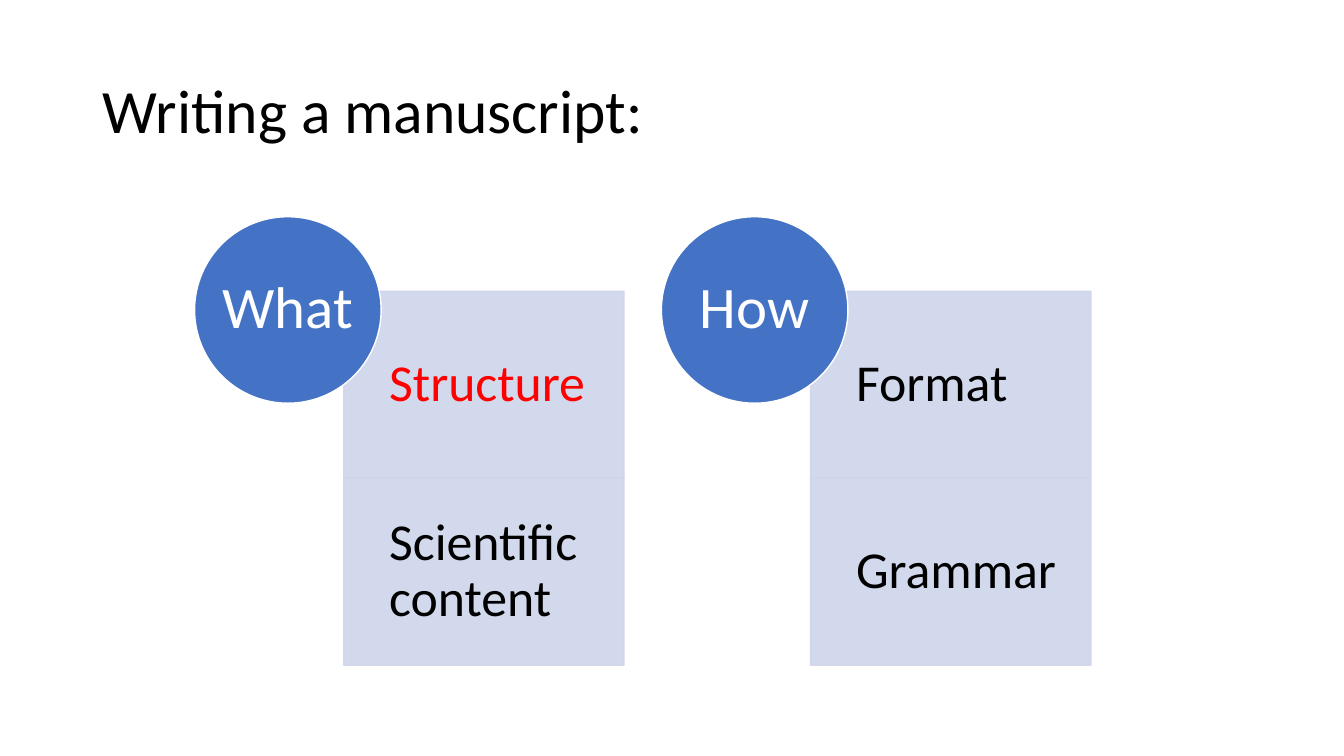
from dataclasses import dataclass

from lxml.etree import SubElement
from pptx import Presentation
from pptx.dml.color import RGBColor
from pptx.enum.shapes import MSO_SHAPE as Preset
from pptx.enum.text import MSO_ANCHOR as Anchor, MSO_AUTO_SIZE as AutoSize, PP_ALIGN as Align
from pptx.oxml.ns import qn
from pptx.shapes.autoshape import Shape
from pptx.slide import Slide
from pptx.util import Inches, Pt


@dataclass(frozen=True)
class Theme:
    font: str = "Calibri"
    black: str = "000000"
    white: str = "FFFFFF"
    highlight: str = "FF0000"
    circle: str = "4472C4"
    panel: str = "CFD5EA"
    panel_opacity: int = 90
    title_size: int = 44
    circle_size: int = 42
    panel_size: int = 37


@dataclass(frozen=True)
class Topic:
    text: str
    color: str


@dataclass(frozen=True)
class Column:
    question: str
    topics: tuple[Topic, ...]


THEME = Theme()
COLUMNS = (
    Column("What", (Topic("Structure", THEME.highlight), Topic("Scientific content", THEME.black))),
    Column("How", (Topic("Format", THEME.black), Topic("Grammar", THEME.black))),
)

CIRCLE_LEFT, CIRCLE_TOP, DIAMETER = 1.93, 2.15, 1.85
COLUMN_PITCH = 4.63
PANEL_OFFSET, PANEL_TOP, PANEL_WIDTH = 1.48, 2.89, 2.78
PANEL_PITCH = 1.855
PANEL_INSETS = (0.45, 0.29, 0.29, 0.29)


def write_text(box: Shape, text: str, *, size: int, color: str, align: Align = Align.LEFT,
               insets: tuple[float, float, float, float] = (0.1, 0.05, 0.1, 0.05),
               wrap: bool = True, space_after: float = 0) -> None:
    frame = box.text_frame
    frame.auto_size = AutoSize.NONE
    frame.word_wrap = wrap
    frame.vertical_anchor = Anchor.MIDDLE
    frame.margin_left, frame.margin_top, frame.margin_right, frame.margin_bottom = map(Inches, insets)
    para = frame.paragraphs[0]
    para.alignment = align
    para.line_spacing = 0.9
    para.space_after = Pt(space_after)
    span = para.add_run()
    span.text = text
    span.font.name = THEME.font
    span.font.size = Pt(size)
    span.font.color.rgb = RGBColor.from_string(color)


def add_filled_shape(page: Slide, preset: Preset, left: float, top: float, width: float,
                     height: float, *, fill: str, line: str, opacity: int = 100) -> Shape:
    shape = page.shapes.add_shape(preset, *map(Inches, (left, top, width, height)))
    shape.shadow.inherit = False
    shape.fill.solid()
    shape.fill.fore_color.rgb = RGBColor.from_string(fill)
    shape.line.color.rgb = RGBColor.from_string(line)
    shape.line.width = Pt(1)
    if opacity < 100:
        for color in shape.element.spPr.iter(qn("a:srgbClr")):
            SubElement(color, qn("a:alpha"), val=str(opacity * 1000))
    return shape


def add_column(page: Slide, column: Column, left: float) -> None:
    """Stack the topic panels and overlap their corner with the question circle."""
    for row, topic in enumerate(column.topics):
        panel = add_filled_shape(page, Preset.RECTANGLE, left + PANEL_OFFSET,
                                 PANEL_TOP + row * PANEL_PITCH, PANEL_WIDTH, PANEL_PITCH,
                                 fill=THEME.panel, line=THEME.panel, opacity=THEME.panel_opacity)
        write_text(panel, topic.text, size=THEME.panel_size, color=topic.color,
                   insets=PANEL_INSETS)
    circle = add_filled_shape(page, Preset.OVAL, left, CIRCLE_TOP, DIAMETER, DIAMETER,
                              fill=THEME.circle, line=THEME.white)
    write_text(circle, column.question, size=THEME.circle_size, color=THEME.white,
               align=Align.CENTER, insets=(0, 0, 0, 0), wrap=False)


def add_title(page: Slide, text: str) -> None:
    title = page.shapes.title
    title.left, title.top, title.width, title.height = map(Inches, (0.92, 0.4, 11.5, 1.45))
    write_text(title, text, size=THEME.title_size, color=THEME.black)


def main() -> None:
    deck = Presentation()
    deck.slide_width, deck.slide_height = Inches(13.33), Inches(7.5)
    title_only = deck.slide_layouts[5]
    page = deck.slides.add_slide(title_only)
    add_title(page, "Writing a manuscript:")
    for index, column in enumerate(COLUMNS):
        add_column(page, column, CIRCLE_LEFT + index * COLUMN_PITCH)
    deck.save("out.pptx")


if __name__ == "__main__":
    main()
